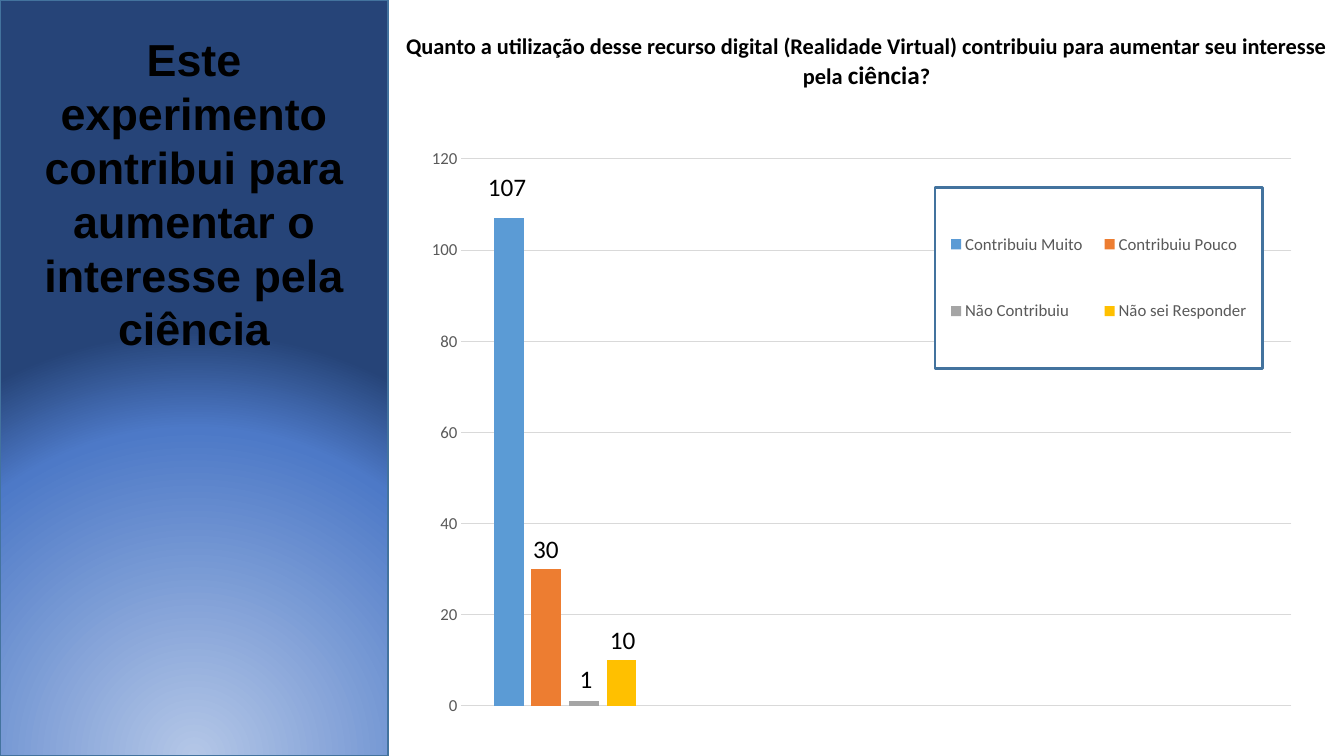
from dataclasses import dataclass

from lxml import etree
from pptx import Presentation
from pptx import util as u
from pptx.chart import data
from pptx.dml import color
from pptx.enum import chart as ch, shapes, text
from pptx.oxml import ns

BLACK = "000000"
GRAY = "595959"
EDGE = "43739E"


@dataclass
class Answer:
    name: str
    count: int
    tint: str
    left: float
    top: float
    width: float


@dataclass
class Run:
    words: str
    size: int
    bold: bool = False
    font: str = "Calibri"


ANSWERS = [
    Answer("Contribuiu Muito", 107, "5B9BD5", 4.74, 1.65, 0.59),
    Answer("Contribuiu Pouco", 30, "ED7D31", 5.19, 5.24, 0.46),
    Answer("Não Contribuiu", 1, "A5A5A5", 5.65, 6.53, 0.33),
    Answer("Não sei Responder", 10, "FFC000", 5.95, 6.14, 0.46),
]
TITLE = [Run("Este experimento contribui para aumentar o interesse pela ciência", 32, True, "Arial")]
QUERY = [
    Run("Quanto a utilização desse recurso digital (Realidade Virtual) contribuiu "
        "para aumentar seu interesse pela ", 16, True),
    Run("ciência", 18, True),
    Run("?", 16, True),
]
STOPS = [(0, "B4C7E7"), (77, "4D79C7"), (100, "264478")]


def rgb(code: str) -> color.RGBColor:
    return color.RGBColor.from_string(code)


def box(slide, left: float, top: float, width: float, height: float) -> tuple:
    return tuple(u.Inches(v) for v in (left, top, width, height))


def style(font, size: float, tint: str) -> None:
    font.name = "Calibri"
    font.size = u.Pt(size)
    font.color.rgb = rgb(tint)


def write(slide, area: tuple, runs: list[Run], wrap: bool = True) -> None:
    frame = slide.shapes.add_textbox(*box(slide, *area)).text_frame
    frame.word_wrap = wrap
    frame.auto_size = text.MSO_AUTO_SIZE.SHAPE_TO_FIT_TEXT
    para = frame.paragraphs[0]
    para.alignment = text.PP_ALIGN.CENTER if wrap else text.PP_ALIGN.LEFT
    for item in runs:
        run = para.add_run()
        run.text = item.words
        style(run.font, item.size, BLACK)
        run.font.name = item.font
        run.font.bold = item.bold


def layout(left: float, top: float, width: float, height: float, inner: bool = False):
    target = '<c:layoutTarget val="inner"/>' if inner else ""
    sizes = zip("xywh", (left, top, width, height))
    return etree.fromstring(
        f'<c:layout {ns.nsdecls("c")}><c:manualLayout>{target}'
        '<c:xMode val="edge"/><c:yMode val="edge"/>'
        + "".join(f'<c:{key} val="{val}"/>' for key, val in sizes)
        + "</c:manualLayout></c:layout>")


def panel(slide) -> None:
    rect = slide.shapes.add_shape(shapes.MSO_SHAPE.RECTANGLE, *box(slide, 0, 0, 3.85, 7.5))
    rect.shadow.inherit = False
    rect.line.color.rgb = rgb(EDGE)
    rect.line.width = u.Pt(1)
    stops = "".join(f'<a:gs pos="{pos * 1000}"><a:srgbClr val="{tint}"/></a:gs>'
                    for pos, tint in STOPS)
    fill = etree.fromstring(
        f'<a:gradFill {ns.nsdecls("a")} rotWithShape="1"><a:gsLst>{stops}</a:gsLst>'
        '<a:path path="circle"><a:fillToRect l="50000" t="130000" r="50000" b="-30000"/>'
        "</a:path></a:gradFill>")
    rect.element.spPr.find(ns.qn("a:prstGeom")).addnext(fill)


def legend(chart) -> None:
    chart.has_legend = True
    key = chart.legend
    key.position = ch.XL_LEGEND_POSITION.BOTTOM
    key.include_in_layout = False
    style(key.font, 12, GRAY)
    node = chart.element.xpath("//c:legend")[0]
    for old in node.findall(ns.qn("c:layout")):
        node.remove(old)
    node.find(ns.qn("c:legendPos")).addnext(layout(0.577, 0.135, 0.366, 0.292))
    look = etree.fromstring(
        f'<c:spPr {ns.nsdecls("c", "a")}><a:solidFill><a:srgbClr val="FFFFFF"/></a:solidFill>'
        f'<a:ln w="{u.Pt(2)}"><a:solidFill><a:srgbClr val="{EDGE}"/></a:solidFill></a:ln></c:spPr>')
    node.find(ns.qn("c:overlay")).addnext(look)


def graph(slide) -> None:
    table = data.CategoryChartData()
    table.categories = ["1", "", "", ""]
    for item in ANSWERS:
        table.add_series(item.name, [item.count, None, None, None])
    chart = slide.shapes.add_chart(
        ch.XL_CHART_TYPE.COLUMN_CLUSTERED, *box(slide, 4.15, 1.03, 8.88, 6.14), table).chart
    style(chart.font, 10, BLACK)
    chart.has_title = False
    plot = chart.plots[0]
    plot.gap_width = 219
    plot.overlap = -27
    plot.vary_by_categories = False
    for series, item in zip(plot.series, ANSWERS):
        series.format.fill.solid()
        series.format.fill.fore_color.rgb = rgb(item.tint)
    chart.category_axis.visible = False
    axis = chart.value_axis
    axis.minimum_scale, axis.maximum_scale, axis.major_unit = 0, 120, 20
    axis.major_tick_mark = axis.minor_tick_mark = ch.XL_TICK_MARK.NONE
    axis.format.line.fill.background()
    style(axis.tick_labels.font, 12, GRAY)
    grid = axis.major_gridlines.format.line
    grid.color.rgb = rgb("D9D9D9")
    grid.width = u.Pt(0.75)
    area = chart.element.xpath("//c:plotArea")[0]
    for old in area.findall(ns.qn("c:layout")):
        area.remove(old)
    area.insert(0, layout(0.048, 0.089, 0.927, 0.884, True))
    legend(chart)


def main() -> None:
    deck = Presentation()
    deck.slide_width = u.Inches(13.33)
    deck.slide_height = u.Inches(7.5)
    slide = deck.slides.add_slide(deck.slide_layouts[6])
    graph(slide)
    panel(slide)
    write(slide, (0, 0.27, 3.85, 3.33), TITLE)
    write(slide, (3.85, 0.27, 9.49, 0.67), QUERY)
    for item in ANSWERS:
        write(slide, (item.left, item.top, item.width, 0.4), [Run(str(item.count), 18)], False)
    deck.save("out.pptx")


if __name__ == "__main__":
    main()
